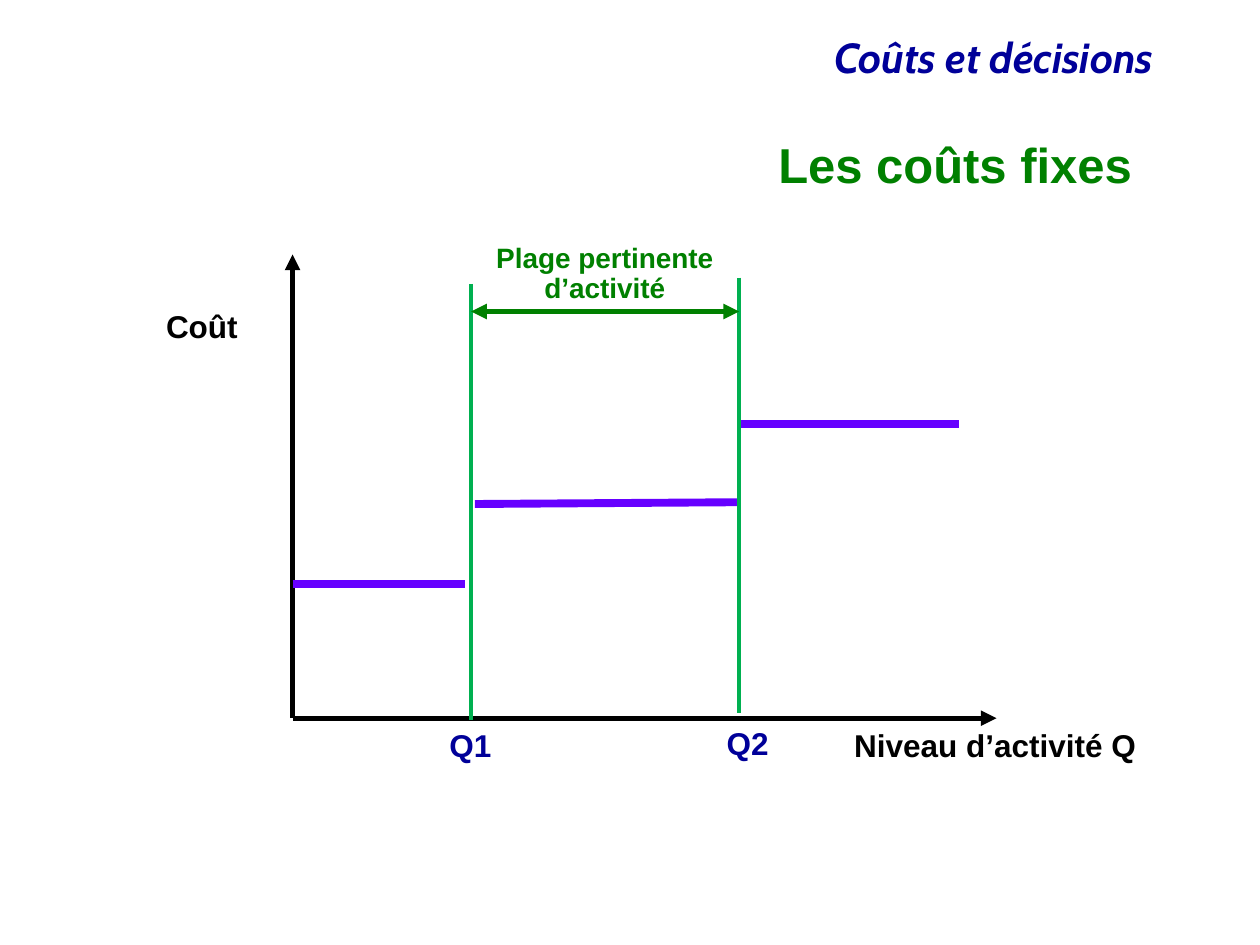
from dataclasses import dataclass

from lxml import etree
from pptx import Presentation
from pptx import util as u
from pptx.dml.color import RGBColor
from pptx.enum import shapes, text
from pptx.oxml.ns import qn


@dataclass(frozen=True)
class Theme:
    font: str = "Arial"
    header_font: str = "Cabin"
    black: str = "000000"
    navy: str = "000099"
    green: str = "008000"
    limit: str = "00B050"
    violet: str = "6600FF"
    title_size: int = 28
    header_size: int = 24
    label_size: int = 18
    note_size: int = 16


def write(frame, words, *, size, color, font, align=text.PP_ALIGN.LEFT,
          italic=False, wrap=True, anchor=text.MSO_ANCHOR.TOP,
          fit=text.MSO_AUTO_SIZE.SHAPE_TO_FIT_TEXT):
    """Put one bold paragraph into a text frame."""
    frame.word_wrap = wrap
    frame.auto_size = fit
    frame.vertical_anchor = anchor
    paragraph = frame.paragraphs[0]
    paragraph.alignment = align
    paragraph.line_spacing = 0.9
    paragraph.space_before = u.Pt(0)
    run = paragraph.add_run()
    run.text = words
    run.font.size = u.Pt(size)
    run.font.name = font
    run.font.bold = True
    run.font.italic = italic
    run.font.color.rgb = RGBColor.from_string(color)


class Board:
    """Holds the theme and the current slide; lengths are in points."""

    def __init__(self, slide, theme):
        self.slide = slide
        self.theme = theme

    def title(self, words, left, top, width, height):
        heading = self.slide.shapes.title
        heading.left, heading.top = u.Pt(left), u.Pt(top)
        heading.width, heading.height = u.Pt(width), u.Pt(height)
        write(heading.text_frame, words, size=self.theme.title_size,
              color=self.theme.green, font=self.theme.font,
              align=text.PP_ALIGN.RIGHT, anchor=text.MSO_ANCHOR.MIDDLE,
              fit=text.MSO_AUTO_SIZE.NONE)

    def label(self, words, left, top, width, height, **style):
        box = self.slide.shapes.add_textbox(
            u.Pt(left), u.Pt(top), u.Pt(width), u.Pt(height))
        defaults = dict(size=self.theme.label_size, color=self.theme.black,
                        font=self.theme.font)
        write(box.text_frame, words, **{**defaults, **style})

    def line(self, start, end, color, weight, arrows=()):
        stroke = self.slide.shapes.add_connector(
            shapes.MSO_CONNECTOR.STRAIGHT, *map(u.Pt, (*start, *end)))
        stroke.line.color.rgb = RGBColor.from_string(color)
        stroke.line.width = u.Pt(weight)
        outline = stroke.line._get_or_add_ln()
        for arrow in arrows:
            etree.SubElement(outline, qn(f"a:{arrow}"), type="triangle")
        etree.SubElement(stroke._element.spPr, qn("a:effectLst"))


def main():
    deck = Presentation()
    deck.slide_width, deck.slide_height = u.Pt(720), u.Pt(540)
    theme = Theme()
    board = Board(deck.slides.add_slide(deck.slide_layouts[5]), theme)

    # Course header and title
    board.label("Coûts et décisions", 90, 18, 576, 33,
                size=theme.header_size, color=theme.navy,
                font=theme.header_font, italic=True,
                align=text.PP_ALIGN.RIGHT)
    board.title("Les coûts fixes", 84, 78, 570, 36)

    # Axes
    origin_x, origin_y = 167.2, 410.4
    q1, q2 = 269.2, 422.4
    for axis_end in ((origin_x, 145.4), (569.5, origin_y)):
        board.line((origin_x, origin_y), axis_end, theme.black, 3, ["tailEnd"])
    board.label("Coût", 87.8, 174.2, 82.8, 41, wrap=False)
    board.label("Niveau d’activité Q", 481, 414, 177, 26.6, wrap=False)

    # Fixed cost steps
    cost_steps = [((origin_x, 333.8), (265.7, 333.8)),
                  ((271.4, 288), (q2, 287)),
                  ((q2, 242.3), (547.9, 242.3))]
    for start, end in cost_steps:
        board.line(start, end, theme.violet, 4.5)

    # Limits of the relevant range
    limits = [("Q1", q1, 162.2, 249.8, 414), ("Q2", q2, 158.7, 408.2, 412.4)]
    for name, x, top, name_left, name_top in limits:
        board.line((x, top), (x, top + 249), theme.limit, 2.25)
        board.label(name, name_left, name_top, 38.9, 26.6,
                    color=theme.navy, wrap=False)

    # Relevant range
    board.line((q1, 178), (q2, 178), theme.green, 3, ["headEnd", "tailEnd"])
    board.label("Plage pertinente d’activité", 263.5, 136, 164.2, 42.5,
                size=theme.note_size, color=theme.green,
                align=text.PP_ALIGN.CENTER)

    deck.save("out.pptx")


if __name__ == "__main__":
    main()
